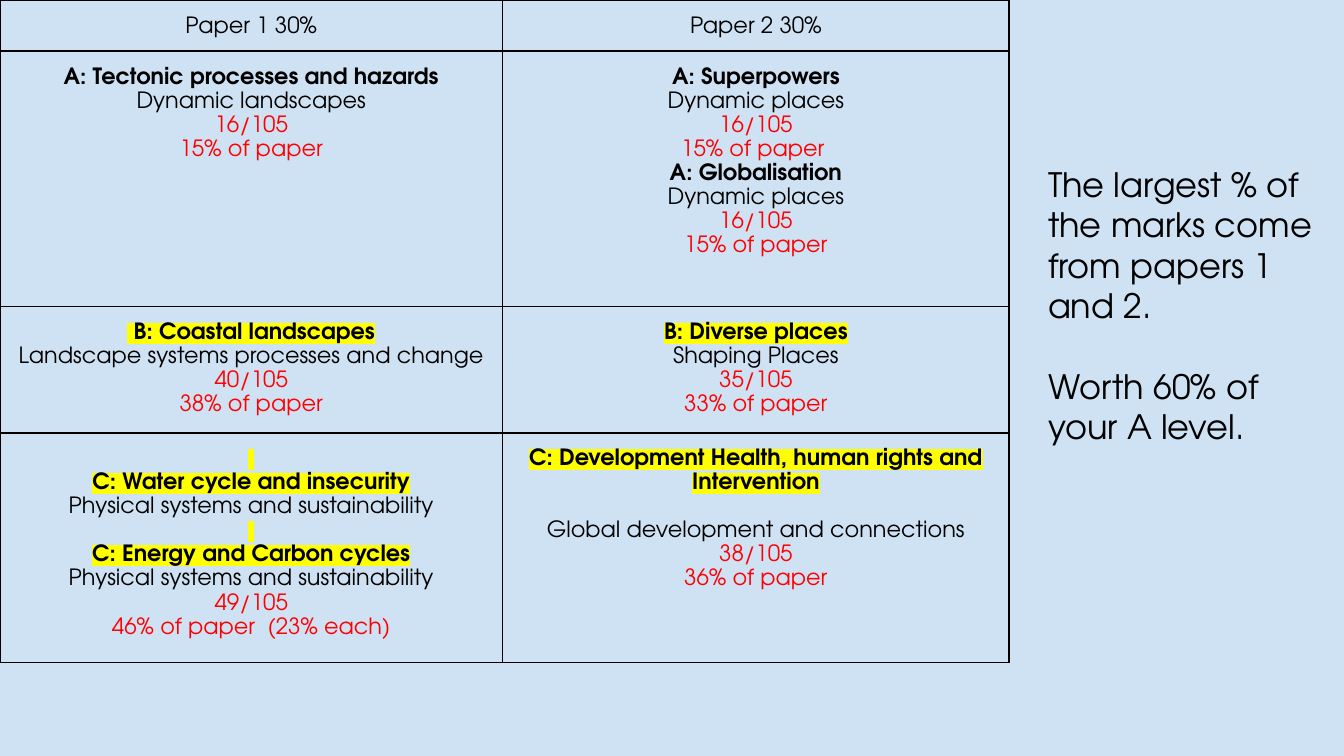
from pptx import Presentation
from pptx.util import Inches, Pt
from pptx.dml.color import RGBColor
from pptx.enum.text import PP_ALIGN as Align
from pptx.oxml import parse_xml
from pptx.oxml.ns import nsdecls

FONT = "TeX Gyre Adventor"
LINE = Pt(12.86)


def rgb(value):
    return RGBColor.from_string(value)


def add_line(frame, index, text, size, color):
    para = frame.paragraphs[0] if index == 0 else frame.add_paragraph()
    span = para.add_run()
    span.text = text
    for name, value in {"size": Pt(size), "name": FONT, "bold": False}.items():
        setattr(span.font, name, value)
    span.font.color.rgb = rgb(color)
    return para, span


deck = Presentation()
deck.slide_width = Inches(10)
deck.slide_height = Inches(10) * 9 // 16
page = deck.slides.add_slide(deck.slide_layouts[6])
page.background.fill.solid()
page.background.fill.fore_color.rgb = rgb("CFE2F3")

styles = {
    "plain": {"color": "000000", "bold": False, "marked": False},
    "topic": {"color": "000000", "bold": True, "marked": False},
    "marked": {"color": "000000", "bold": True, "marked": True},
    "score": {"color": "FF0000", "bold": False, "marked": False},
}
rows = [
    [
        [("plain", "Paper 1 30%")],
        [("plain", "Paper 2 30%")],
    ],
    [
        [("topic", "A: Tectonic processes and hazards"), ("plain", "Dynamic landscapes"),
         ("score", "16/105"), ("score", "15% of paper")],
        [("topic", "A: Superpowers"), ("plain", "Dynamic places"),
         ("score", "16/105"), ("score", "15% of paper "),
         ("topic", "A: Globalisation"), ("plain", "Dynamic places"),
         ("score", "16/105"), ("score", "15% of paper")],
    ],
    [
        [("marked", " B: Coastal landscapes"), ("plain", "Landscape systems processes and change"),
         ("score", "40/105"), ("score", "38% of paper")],
        [("marked", "B: Diverse places"), ("plain", "Shaping Places"),
         ("score", "35/105"), ("score", "33% of paper")],
    ],
    [
        [("marked", " "), ("marked", "C: Water cycle and insecurity"),
         ("plain", "Physical systems and sustainability"),
         ("marked", " "), ("marked", "C: Energy and Carbon cycles"),
         ("plain", "Physical systems and sustainability"),
         ("score", "49/105"), ("score", "46% of paper  (23% each)")],
        [("marked", "C: Development Health, human rights and Intervention"),
         ("plain", "Global development and connections"),
         ("score", "38/105"), ("score", "36% of paper")],
    ],
]
widths = [3.74, 3.77]
heights = [0.38, 1.9, 0.94, 1.71]
margins = {"margin_left": 0.07, "margin_right": 0.07, "margin_top": 0.1, "margin_bottom": 0.1}

table = page.shapes.add_table(
    len(heights), len(widths), 0, 0, Inches(sum(widths)), Inches(sum(heights))
).table
table.first_row = table.horz_banding = False
for column, width in zip(table.columns, widths):
    column.width = Inches(width)
for row, height in zip(table.rows, heights):
    row.height = Inches(height)

for row_index, row in enumerate(rows):
    for column_index, lines in enumerate(row):
        cell = table.cell(row_index, column_index)
        for name, value in margins.items():
            setattr(cell, name, Inches(value))
        for index, (kind, text) in enumerate(lines):
            style = styles[kind]
            para, span = add_line(cell.text_frame, index, text, 12, style["color"])
            para.alignment = Align.CENTER
            para.line_spacing = LINE
            span.font.bold = style["bold"]
            if text.startswith("Global development"):
                para.space_before = LINE
            if style["marked"]:
                fill = span.font._element.find("{*}solidFill")
                fill.addnext(parse_xml(
                    f'<a:highlight {nsdecls("a")}><a:srgbClr val="FFFF00"/></a:highlight>'
                ))
        properties = cell._tc.get_or_add_tcPr()
        for side in ("lnL", "lnR", "lnT", "lnB"):
            properties.append(parse_xml(
                f'<a:{side} {nsdecls("a")} w="{Pt(1)}"><a:solidFill>'
                f'<a:srgbClr val="000000"/></a:solidFill></a:{side}>'
            ))
        cell.fill.background()

box = page.shapes.add_textbox(Inches(7.7), Inches(1.12), Inches(2.3), Inches(3.59))
frame = box.text_frame
frame.word_wrap = True
for side in ("left", "right", "top", "bottom"):
    setattr(frame, f"margin_{side}", Inches(0.1))
messages = ["The largest % of the marks come from papers 1 and 2.", "Worth 60% of your A level."]
for index, message in enumerate(messages):
    para, span = add_line(frame, index, message, 18, "000000")
    para.line_spacing = Pt(21.6)
    para.space_before = Pt(21.6 * index)

deck.save("out.pptx")
